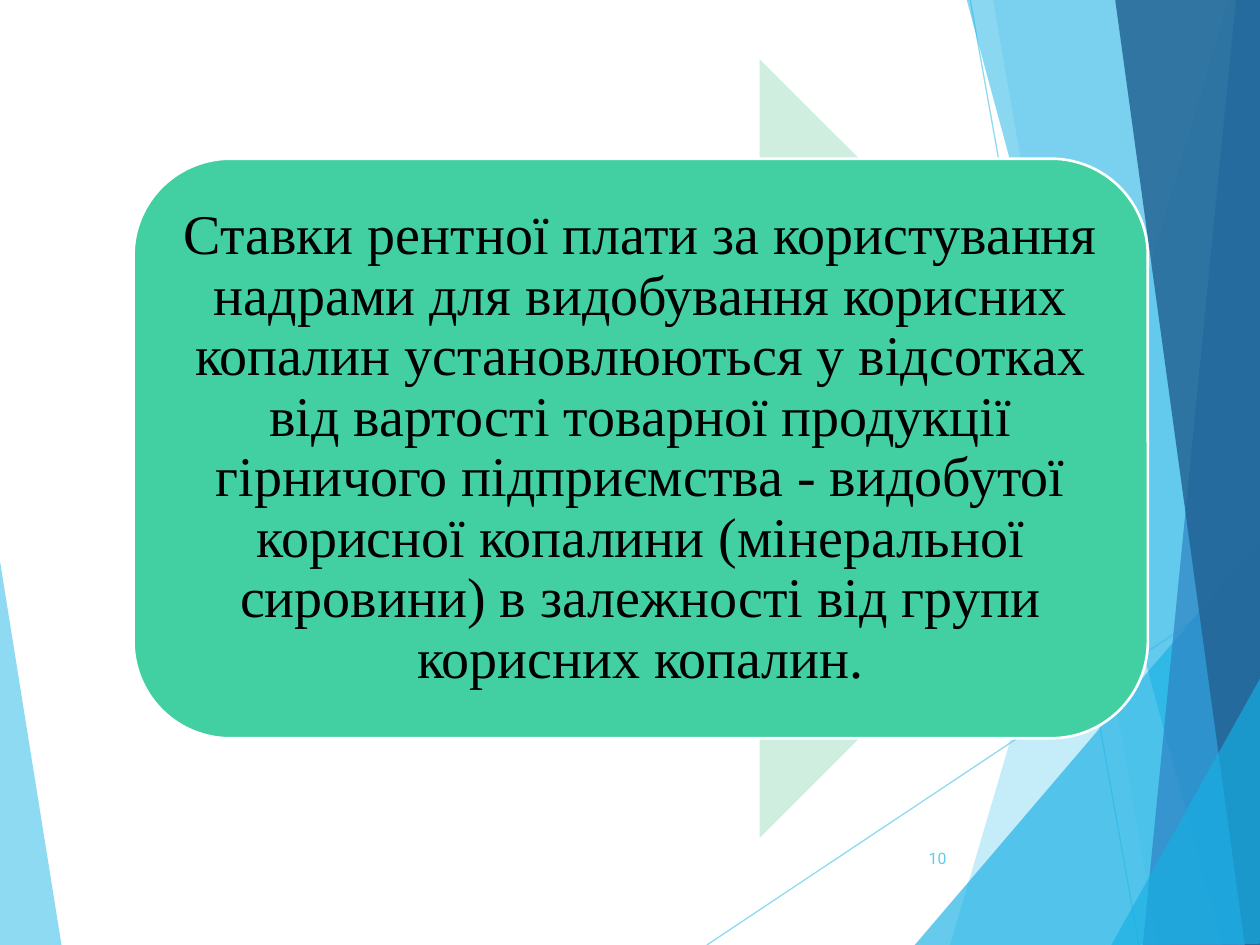
"""Build the slide on rent payment rates for subsoil use."""
from typing import NamedTuple

from lxml import etree
from pptx import Presentation
from pptx.dml.color import RGBColor
from pptx.enum.shapes import MSO_CONNECTOR, MSO_SHAPE
from pptx.enum.text import MSO_ANCHOR, PP_ALIGN
from pptx.oxml.ns import qn
from pptx.util import Emu, Pt

STRAIGHT = MSO_CONNECTOR.STRAIGHT
ARROW, ROUNDED = MSO_SHAPE.RIGHT_ARROW, MSO_SHAPE.ROUNDED_RECTANGLE
MIDDLE = MSO_ANCHOR.MIDDLE
CENTER, RIGHT = PP_ALIGN.CENTER, PP_ALIGN.RIGHT

SKY = RGBColor(0x5F, 0xCB, 0xEF)
CYAN = RGBColor(0x17, 0xB0, 0xE4)
BLUE = RGBColor(0x2E, 0x83, 0xC3)
NAVY = RGBColor(0x22, 0x62, 0x92)
MINT = RGBColor(0xCF, 0xEE, 0xE0)
GREEN = RGBColor(0x42, 0xD0, 0xA2)
WHITE = RGBColor(0xFF, 0xFF, 0xFF)
BLACK = RGBColor(0x00, 0x00, 0x00)

EMU_PER_PX = 9144
WIDTH, HEIGHT = 1000, 750
STATEMENT = (
    "Ставки рентної плати за користування надрами для видобування корисних "
    "копалин установлюються у відсотках від вартості товарної продукції "
    "гірничого підприємства - видобутої корисної копалини (мінеральної "
    "сировини) в залежності від групи корисних копалин."
)


class Facet(NamedTuple):
    points: list[tuple[int, int]]
    color: RGBColor
    opacity: int


class Ray(NamedTuple):
    start: tuple[int, int]
    end: tuple[int, int]


class Box(NamedTuple):
    left: int
    top: int
    width: int
    height: int


class TextStyle(NamedTuple):
    font: str
    size: int
    color: RGBColor
    alignment: PP_ALIGN
    line_spacing: float = 1.0


LEFT_FACET = Facet([(-1, 439), (49, 751), (-1, 750)], SKY, 70)
RAYS = [Ray((561, 750), (1001, 457)), Ray((770, 0), (904, 750))]
RIGHT_FACETS = [
    Facet([(975, 0), (754, 750), (1002, 751), (1001, 1)], SKY, 36),
    Facet([(788, -1), (919, 750), (1001, 750), (1001, -1)], SKY, 20),
    Facet([(726, 750), (1000, 429), (1001, 750)], CYAN, 66),
    Facet([(767, -1), (970, 750), (1001, 749), (1001, -1)], CYAN, 50),
    Facet([(981, -1), (907, 750), (1001, 750), (1000, -1)], BLUE, 70),
    Facet([(885, -1), (988, 750), (1002, 750), (1000, -1)], NAVY, 82),
    Facet([(882, 750), (1002, 535), (1002, 749)], CYAN, 66),
]
ARROW_BOX = Box(105, 47, 807, 618)
STATEMENT_BOX = Box(106, 126, 805, 460)
NUMBER_BOX = Box(705, 661, 56, 40)
STATEMENT_STYLE = TextStyle("Times New Roman", 32, BLACK, CENTER, 0.9)
NUMBER_STYLE = TextStyle("Roboto", 9, SKY, RIGHT)


def px(length: int) -> Emu:
    """Turn px into EMU."""
    return Emu(length * EMU_PER_PX)


def set_opacity(element, percent: int) -> None:
    """Make the first solid color within an element translucent."""
    color = next(element.iter(qn("a:srgbClr")))
    etree.SubElement(color, qn("a:alpha")).set("val", str(percent * 1000))


def draw_facet(slide, facet: Facet) -> None:
    """Draw one translucent polygon."""
    builder = slide.shapes.build_freeform(*facet.points[0], scale=EMU_PER_PX)
    builder.add_line_segments(facet.points[1:], close=True)
    shape = builder.convert_to_shape()
    shape.shadow.inherit = False
    shape.fill.solid()
    shape.fill.fore_color.rgb = facet.color
    set_opacity(shape.fill._xPr, facet.opacity)
    shape.line.fill.background()


def draw_ray(slide, ray: Ray) -> None:
    """Draw one thin translucent line."""
    ends = [px(value) for value in (*ray.start, *ray.end)]
    connector = slide.shapes.add_connector(STRAIGHT, *ends)
    connector.line.color.rgb = SKY
    connector.line.width = Pt(0.75)
    properties = connector._element.spPr
    set_opacity(properties, 70)
    etree.SubElement(properties, qn("a:effectLst"))


def draw_block(slide, kind: MSO_SHAPE, box: Box, color: RGBColor):
    """Draw a filled preset shape without an outline."""
    shape = slide.shapes.add_shape(kind, *map(px, box))
    shape.shadow.inherit = False
    shape.fill.solid()
    shape.fill.fore_color.rgb = color
    shape.line.fill.background()
    return shape


def write_text(shape, text: str, style: TextStyle) -> None:
    """Write one vertically centered paragraph into a shape."""
    frame = shape.text_frame
    frame.word_wrap = True
    frame.vertical_anchor = MIDDLE
    paragraph = frame.paragraphs[0]
    paragraph.alignment = style.alignment
    paragraph.line_spacing = style.line_spacing
    run = paragraph.add_run()
    run.text = text
    run.font.name = style.font
    run.font.size = Pt(style.size)
    run.font.color.rgb = style.color


def draw_statement(slide) -> None:
    """Draw the rounded panel with the statement."""
    panel = draw_block(slide, ROUNDED, STATEMENT_BOX, GREEN)
    panel.line.color.rgb = WHITE
    panel.line.width = Pt(1.5)
    frame = panel.text_frame
    frame.margin_left = frame.margin_right = px(13)
    frame.margin_top = frame.margin_bottom = px(13)
    write_text(panel, STATEMENT, STATEMENT_STYLE)


def main() -> None:
    """Build and save the presentation."""
    presentation = Presentation()
    presentation.slide_width, presentation.slide_height = px(WIDTH), px(HEIGHT)
    slide = presentation.slides.add_slide(presentation.slide_layouts[6])
    draw_facet(slide, LEFT_FACET)
    for ray in RAYS:
        draw_ray(slide, ray)
    for facet in RIGHT_FACETS:
        draw_facet(slide, facet)
    draw_block(slide, ARROW, ARROW_BOX, MINT)
    draw_statement(slide)
    number = slide.shapes.add_textbox(*map(px, NUMBER_BOX))
    write_text(number, "10", NUMBER_STYLE)
    presentation.save("out.pptx")


if __name__ == "__main__":
    main()
